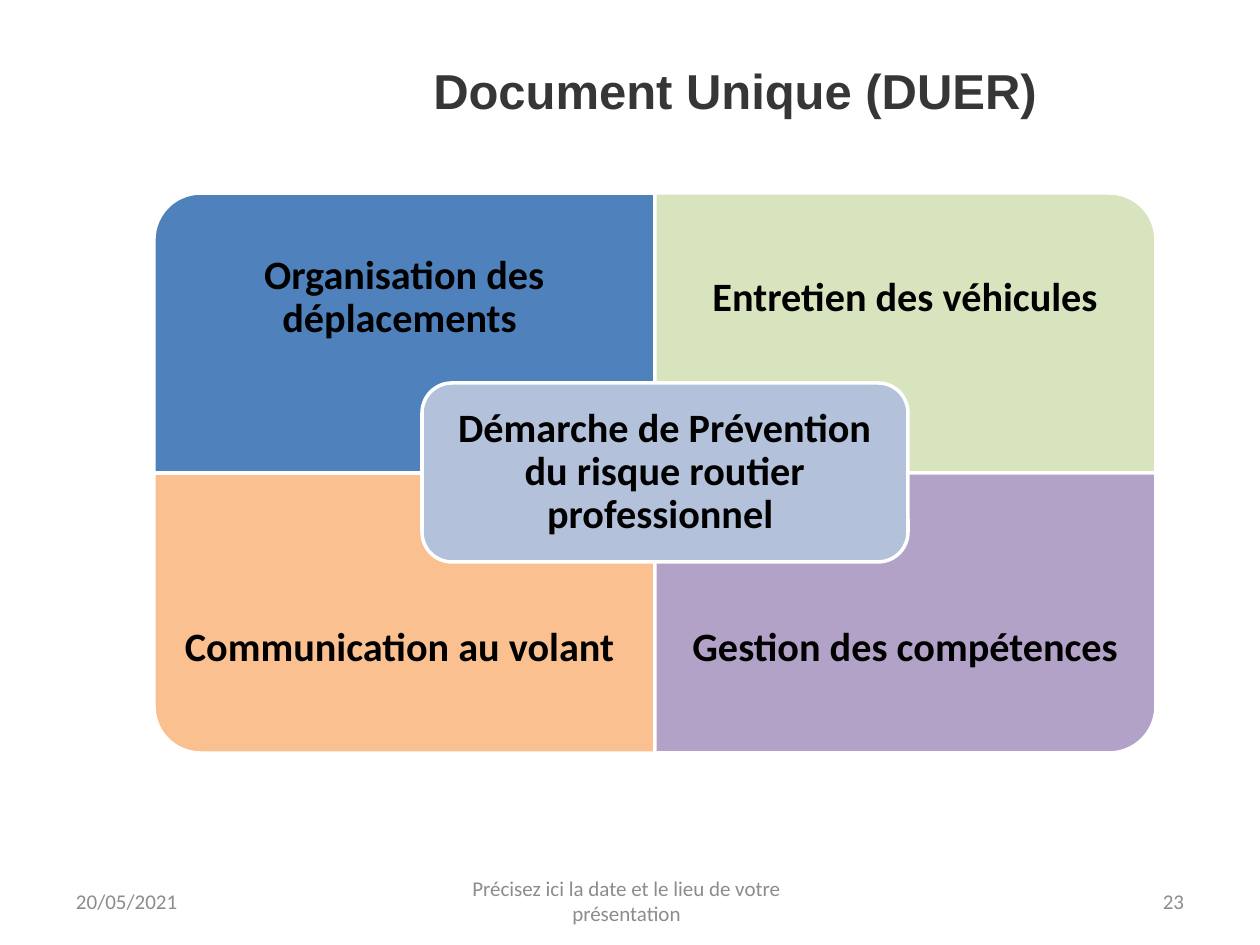
from pptx import Presentation
from pptx.dml.color import RGBColor
from pptx.enum.shapes import MSO_SHAPE
from pptx.enum.text import MSO_ANCHOR, PP_ALIGN
from pptx.util import Pt

SCALE = 914400 / 126
ROUND = MSO_SHAPE.ROUNDED_RECTANGLE
CORNER = MSO_SHAPE.ROUND_1_RECTANGLE
MIDDLE = MSO_ANCHOR.MIDDLE
LEFT, CENTER, RIGHT = PP_ALIGN.LEFT, PP_ALIGN.CENTER, PP_ALIGN.RIGHT


def px(n):
    return round(n * SCALE)


def color(code):
    return RGBColor.from_string(code)


class Deck:
    font = "Calibri"
    ink = "000000"
    edge = "FFFFFF"

    def __init__(self, wide, high):
        self.file = Presentation()
        self.file.slide_width = px(wide)
        self.file.slide_height = px(high)
        self.slide = self.file.slides.add_slide(self.file.slide_layouts[6])

    def text(self, shape, words, size, code, align=CENTER, font=None,
             bold=False, pad=(13, 6), lead=None):
        frame = shape.text_frame
        frame.text = words
        frame.word_wrap = True
        frame.vertical_anchor = MIDDLE
        frame.margin_left = frame.margin_right = px(pad[0])
        frame.margin_top = frame.margin_bottom = px(pad[1])
        para = frame.paragraphs[0]
        para.alignment = align
        if lead:
            para.line_spacing = lead
        for run in para.runs:
            run.font.name = font or self.font
            run.font.size = Pt(size)
            run.font.bold = bold
            run.font.color.rgb = color(code)

    def label(self, shape, words, pad):
        self.text(shape, words, 23, self.ink, bold=True, pad=(pad, pad), lead=0.9)

    def box(self, x, y, w, h):
        return self.slide.shapes.add_textbox(px(x), px(y), px(w), px(h))

    def shape(self, kind, x, y, w, h, fill, turn=0):
        if turn % 180:
            x, y, w, h = x + (w - h) / 2, y + (h - w) / 2, h, w
        shape = self.slide.shapes.add_shape(kind, px(x), px(y), px(w), px(h))
        shape.rotation = turn
        shape.shadow.inherit = False
        shape.fill.solid()
        shape.fill.fore_color.rgb = color(fill)
        shape.line.color.rgb = color(self.edge)
        shape.line.width = Pt(2)
        return shape


def main():
    deck = Deck(1260, 945)

    footer = [
        (427, 399, CENTER, "Précisez ici la date et le lieu de votre présentation"),
        (63, 294, LEFT, "20/05/2021"),
        (903, 294, RIGHT, "23"),
    ]
    for x, w, align, words in footer:
        deck.text(deck.box(x, 876, w, 50), words, 12, "8C8C8C", align)

    left, top, wide, high, band = 154, 193, 501, 280, 210
    parts = [
        ("Organisation des déplacements ", "4F81BD", 270),
        ("Entretien des véhicules", "D7E4BD", 0),
        ("Communication au volant ", "FAC090", 180),
        ("Gestion des compétences", "B3A2C7", 90),
    ]
    for i, (words, fill, turn) in enumerate(parts):
        row, col = divmod(i, 2)
        x, y = left + col * wide, top + row * high
        deck.shape(CORNER, x, y, wide, high, fill, turn)
        deck.label(deck.box(x, y + row * (high - band), wide, band), words, 23)

    core = deck.shape(ROUND, 422, 383, 486, 179, "B3C1DB")
    deck.label(core, "Démarche de Prévention du risque routier professionnel ", 13)

    deck.text(deck.box(372, 56, 726, 68), "Document Unique (DUER)", 28, "363636",
              font="Arial", bold=True)
    deck.file.save("out.pptx")


if __name__ == "__main__":
    main()
